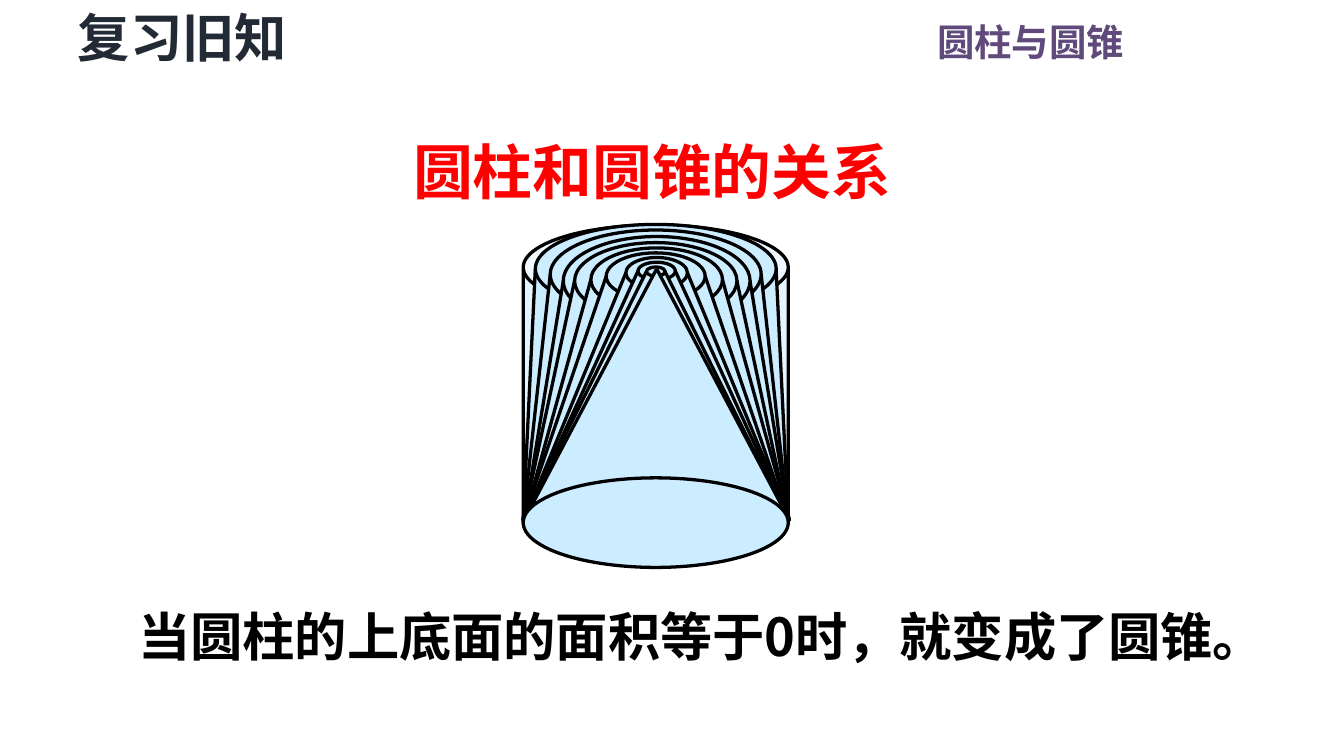
from dataclasses import dataclass

from lxml.etree import SubElement
from pptx import Presentation
from pptx.dml.color import RGBColor
from pptx.enum.shapes import MSO_SHAPE as Shape
from pptx.enum.text import MSO_ANCHOR as Anchor, MSO_AUTO_SIZE as AutoSize, PP_ALIGN as Align
from pptx.oxml.ns import qn
from pptx.util import Pt


@dataclass(frozen=True)
class Theme:
    font: str = "Noto Sans CJK SC"
    title: str = "222A35"
    chapter: str = "604A7B"
    heading: str = "FF0000"
    ink: str = "000000"
    solid: str = "CCECFF"
    outline: float = 1.75
    chapter_size: int = 20
    text_size: int = 28
    heading_size: int = 32


THEME = Theme()

# Each frustum: left shift, top width, rim height, top ellipse height
FRUSTUMS = [
    (0, 129, 23.5, 47.5),
    (0, 113, 26.5, 47.5),
    (0.5, 100, 30, 47.5),
    (0, 87, 30, 41),
    (0.5, 70.5, 29.3, 34),
    (0, 53, 27.5, 25),
    (0.5, 33, 25.7, 16.5),
    (0.5, 20, 24.7, 9.5),
    (0, 10, 25, 5),
    (0.5, 0.7, 24.2, 0),
]


def place(shape, box):
    shape.left, shape.top, shape.width, shape.height = (Pt(value) for value in box)


def write(shape, text, size, color, align=Align.LEFT, inset=(7.2, 3.6)):
    frame = shape.text_frame
    frame.text = text
    frame.word_wrap = True
    frame.auto_size = AutoSize.NONE
    frame.vertical_anchor = Anchor.TOP
    frame.margin_left = frame.margin_right = Pt(inset[0])
    frame.margin_top = frame.margin_bottom = Pt(inset[1])
    paragraph = frame.paragraphs[0]
    paragraph.alignment = align
    for run in paragraph.runs:
        font = run.font
        font.name, font.size, font.bold = THEME.font, Pt(size), True
        font.color.rgb = RGBColor.from_string(color)
        SubElement(run._r.get_or_add_rPr(), qn("a:ea")).set("typeface", THEME.font)


def paint(shape):
    shape.shadow.inherit = False
    shape.fill.solid()
    shape.fill.fore_color.rgb = RGBColor.from_string(THEME.solid)
    shape.line.color.rgb = RGBColor.from_string(THEME.ink)
    shape.line.width = Pt(THEME.outline)


def add_ellipse(shapes, center_x, center_y, width, height):
    ellipse = shapes.add_shape(Shape.OVAL, Pt(center_x - width / 2), Pt(center_y - height / 2),
                               Pt(width), Pt(height))
    paint(ellipse)


def add_header(slide, left, top):
    # Section title and chapter name
    title = slide.shapes.title
    place(title, (left, top, 145.5, 39.5))
    write(title, "复习旧知", THEME.text_size, THEME.title, inset=(5, 2.9))
    chapter = slide.shapes.add_textbox(Pt(left + 448), Pt(top + 6.5), Pt(124.5), Pt(31.5))
    write(chapter, "圆柱与圆锥", THEME.chapter_size, THEME.chapter, Align.RIGHT)


def add_heading(slide, box):
    heading = slide.shapes.add_shape(Shape.ROUNDED_RECTANGLE, *(Pt(value) for value in box))
    heading.shadow.inherit = False
    heading.fill.background()
    heading.line.fill.background()
    write(heading, "圆柱和圆锥的关系", THEME.heading_size, THEME.heading, Align.CENTER)


def add_cylinder(slide, left, top, width, height):
    # Half-transparent can
    can = slide.shapes.add_shape(Shape.CAN, Pt(left), Pt(top), Pt(width), Pt(height))
    can.adjustments[0] = 0.32
    paint(can)
    color = can.fill._xPr.find(qn("a:solidFill"))[0]
    SubElement(color, qn("a:alpha")).set("val", "50000")


def add_frustum(slide, left, top, width, shift, top_width, rim, top_height):
    shapes = slide.shapes.add_group_shape().shapes
    left += shift
    center = left + width / 2
    base_y, rim_y = top + 158, top + rim

    # Side outline
    start, *others = [(Pt(x), Pt(y)) for x, y in (
        (left, base_y), (center - top_width / 2, rim_y),
        (center + top_width / 2, rim_y), (left + width, base_y))]
    builder = shapes.build_freeform(*start)
    builder.add_line_segments(others, close=True)
    paint(builder.convert_to_shape())

    # Top face
    if top_height:
        add_ellipse(shapes, center, rim_y, top_width, top_height)


def add_solids(slide, left, top, width, height):
    add_cylinder(slide, left, top, width, height)
    for frustum in FRUSTUMS:
        add_frustum(slide, left, top, width, *frustum)
    # Base shared by all the solids
    add_ellipse(slide.shapes, left + width / 2, top + 159.5, width, 48)


def add_conclusion(slide, box):
    conclusion = slide.shapes.add_textbox(*(Pt(value) for value in box))
    write(conclusion, "当圆柱的上底面的面积等于0时，就变成了圆锥。", THEME.text_size, THEME.ink)


def main():
    presentation = Presentation()
    presentation.slide_width, presentation.slide_height = Pt(720), Pt(405)
    slide = presentation.slides.add_slide(presentation.slide_layouts[5])
    add_header(slide, 36.8, 0)
    add_heading(slide, (167.2, 66.4, 364.5, 51))
    add_solids(slide, 280.3, 120.5, 142, 181.5)
    add_conclusion(slide, (67, 320.3, 633, 41))
    presentation.save("out.pptx")


if __name__ == "__main__":
    main()
